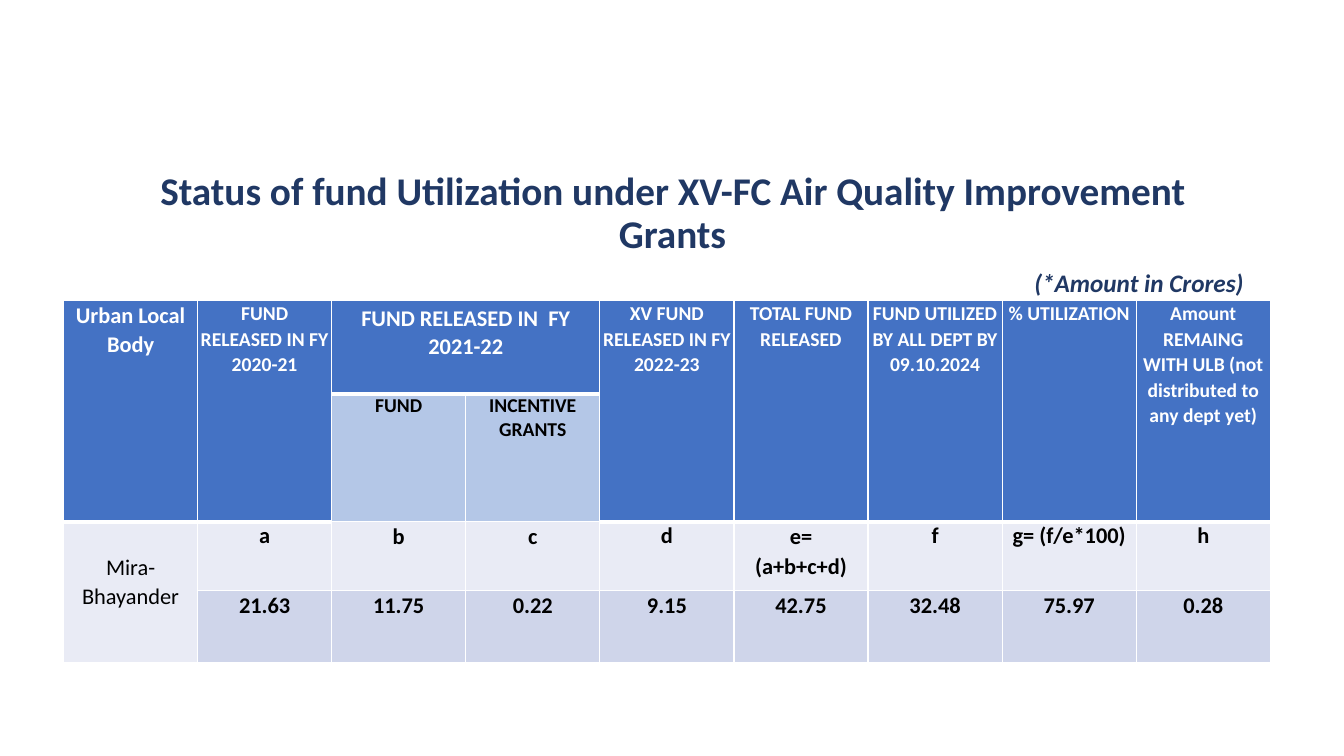
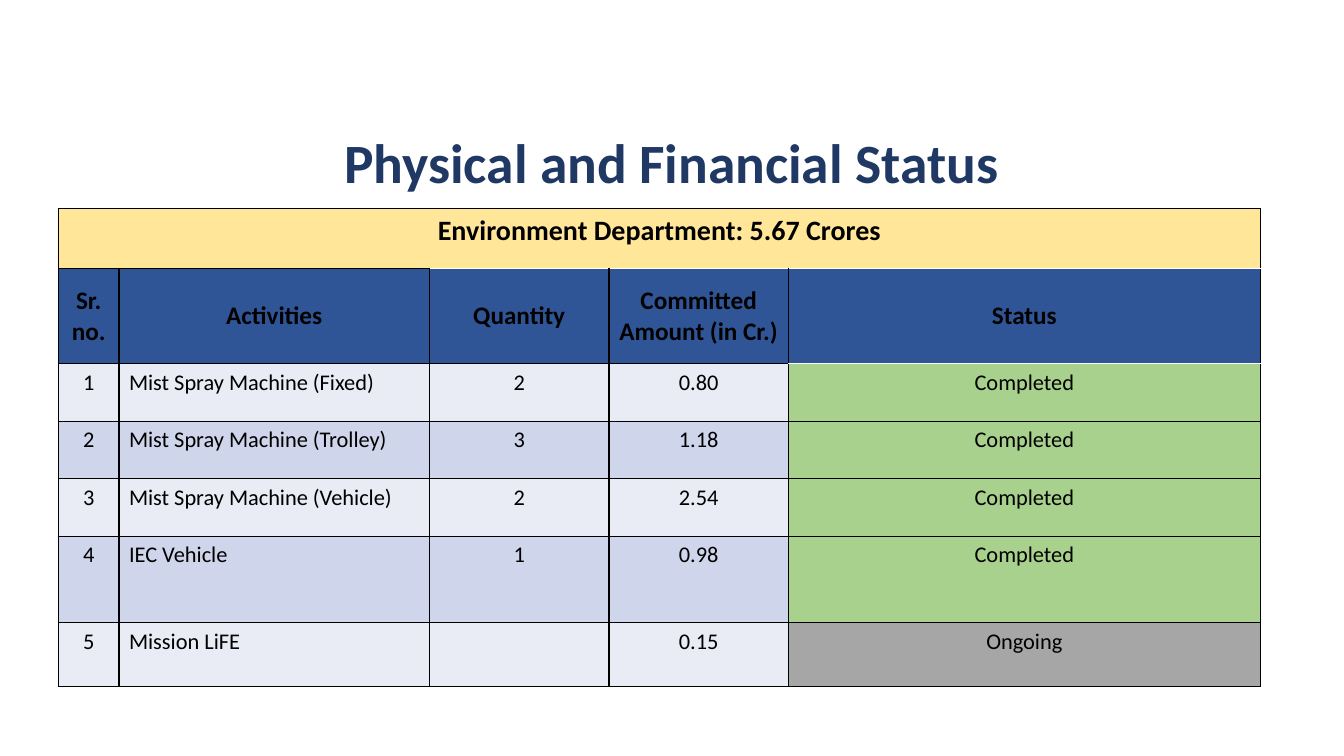
from dataclasses import dataclass

from lxml.etree import SubElement
from pptx import Presentation
from pptx.dml.color import RGBColor
from pptx.enum.text import MSO_ANCHOR as Anchor, MSO_AUTO_SIZE as AutoSize, PP_ALIGN as Align
from pptx.oxml.ns import qn
from pptx.util import Inches, Pt


@dataclass(frozen=True)
class Theme:
    font: str = "Calibri"
    # Colours
    navy: str = "203864"
    header: str = "4472C4"
    subheader: str = "B4C7E7"
    dark_header: str = "2F5597"
    band_light: str = "E9EBF5"
    band_dark: str = "CFD5EA"
    banner: str = "FFE699"
    done: str = "A9D18E"
    ongoing: str = "A6A6A6"
    black: str = "000000"
    white: str = "FFFFFF"
    # Type sizes
    title: float = 39.6
    long_title: float = 28
    banner_size: float = 20
    heading: float = 18
    body: float = 16
    small: float = 14
    # Cell margins: left, top, right, bottom
    roomy: tuple = (0.1, 0.05, 0.1, 0.05)
    tight: tuple = (0.03, 0, 0.03, 0)


class SlideBuilder:
    SIDES = ("lnL", "lnR", "lnT", "lnB")

    def __init__(self, theme):
        self.theme = theme
        self.deck = Presentation()
        self.deck.slide_width = Inches(13.33)
        self.deck.slide_height = Inches(7.5)
        self.page = None

    def add_page(self):
        self.page = self.deck.slides.add_slide(self.deck.slide_layouts[5])

    def format_text(self, frame, size, color, bold=False, italic=False,
                    align=Align.CENTER, spacing=None, after=None):
        for para in frame.paragraphs:
            para.alignment = align
            if spacing:
                para.line_spacing = spacing
            for span in para.runs:
                span.font.name = self.theme.font
                span.font.size = Pt(size)
                span.font.bold = bold
                span.font.italic = italic
                span.font.color.rgb = RGBColor.from_string(color)
        if after:
            frame.paragraphs[-1].space_after = Pt(after)

    def title(self, text, left, top, width, height, size):
        box = self.page.shapes.title
        box.left, box.top, box.width, box.height = map(Inches, (left, top, width, height))
        frame = box.text_frame
        frame.text = text
        frame.word_wrap = True
        frame.auto_size = AutoSize.NONE
        frame.vertical_anchor = Anchor.MIDDLE
        self.format_text(frame, size, self.theme.navy, bold=True, spacing=0.9)

    def note(self, text, left, top, width, height):
        box = self.page.shapes.add_textbox(*map(Inches, (left, top, width, height)))
        frame = box.text_frame
        frame.word_wrap = True
        frame.text = text
        self.format_text(frame, self.theme.heading, self.theme.navy,
                         bold=True, italic=True, align=Align.LEFT)

    def table(self, left, top, columns, rows, line_color):
        frame = self.page.shapes.add_table(
            len(rows), len(columns), Inches(left), Inches(top),
            Inches(sum(columns)), Inches(sum(rows)))
        table = frame.table
        table.first_row = table.horz_banding = False
        for column, width in zip(table.columns, columns):
            column.width = Inches(width)
        for row, height in zip(table.rows, rows):
            row.height = Inches(height)
        for cell in table.iter_cells():
            for side in self.SIDES:
                self.border(cell, side, line_color, 1)
        return table

    def border(self, cell, side, color, width):
        properties = cell._tc.get_or_add_tcPr()
        old = properties.find(qn(f"a:{side}"))
        if old is not None:
            properties.remove(old)
        line = SubElement(properties, qn(f"a:{side}"), w=str(Pt(width)))
        fill = SubElement(line, qn("a:solidFill"))
        SubElement(fill, qn("a:srgbClr"), val=color)
        properties.insert(self.SIDES.index(side), line)

    def edge_above(self, table, row, column, color, width):
        self.border(table.cell(row - 1, column), "lnB", color, width)
        self.border(table.cell(row, column), "lnT", color, width)

    def cell(self, cell, text, fill, size, color=None, bold=False, margins=None,
             anchor=Anchor.TOP, **paragraph_format):
        cell.fill.solid()
        cell.fill.fore_color.rgb = RGBColor.from_string(fill)
        left, top, right, bottom = map(Inches, margins or self.theme.roomy)
        cell.margin_left, cell.margin_right = left, right
        cell.margin_top, cell.margin_bottom = top, bottom
        cell.vertical_anchor = anchor
        if text:
            cell.text_frame.text = text
            self.format_text(cell.text_frame, size, color or self.theme.black,
                             bold, **paragraph_format)


def fund_slide(builder):
    theme = builder.theme
    builder.add_page()
    builder.title("Status of fund Utilization under XV-FC Air Quality Improvement Grants",
                  0.92, 1.65, 11.5, 0.95, theme.long_title)
    table = builder.table(0.63, 2.98, [1.33] * 9, [0.93, 0.67, 0.68, 0.72], theme.white)
    loose = dict(spacing=1.07, after=8)

    # Header row, merged down except for the two 2021-22 columns
    headers = ["Urban Local Body", "FUND RELEASED IN FY 2020-21",
               "FUND RELEASED IN  FY 2021-22", "", "XV FUND RELEASED IN FY 2022-23",
               "TOTAL FUND RELEASED", "FUND UTILIZED BY ALL DEPT BY 09.10.2024",
               "% UTILIZATION", "Amount REMAING WITH ULB (not distributed to any dept yet)"]
    split = {2: "FUND", 3: "INCENTIVE GRANTS"}
    for column, text in enumerate(headers):
        grouped = column in split
        builder.cell(table.cell(0, column), text, theme.header,
                     theme.body if column in (0, 2) else theme.small, theme.white, bold=True,
                     margins=theme.roomy if grouped else theme.tight,
                     **({} if grouped else loose))
        builder.cell(table.cell(1, column), split.get(column),
                     theme.subheader if grouped else theme.header, theme.small,
                     bold=True, margins=theme.tight)
        builder.edge_above(table, 1 if grouped else 2, column, theme.white, 3)
        if not grouped:
            builder.border(table.cell(0, column), "lnB", theme.white, 3)
            table.cell(0, column).merge(table.cell(1, column))
    table.cell(0, 2).merge(table.cell(0, 3))

    # Formula letters and amounts
    letters = ["a", "b", "c", "d", "e=\n(a+b+c+d)", "f", "g= (f/e*100)", "h"]
    amounts = ["21.63", "11.75", "0.22", "9.15", "42.75", "32.48", "75.97", "0.28"]
    for column, (letter, amount) in enumerate(zip(letters, amounts), start=1):
        spacing = 1.07 if letter[0] in "bce" else None
        builder.cell(table.cell(2, column), letter, theme.band_light, theme.body,
                     bold=True, margins=theme.tight, spacing=spacing)
        builder.cell(table.cell(3, column), amount, theme.band_dark, theme.body,
                     bold=True, margins=theme.tight, **loose)

    # Urban local body, merged over both rows
    builder.cell(table.cell(2, 0), "Mira-Bhayander", theme.band_light, theme.body,
                 margins=(0.1, 0.3, 0.1, 0.05), **loose)
    builder.cell(table.cell(3, 0), "", theme.band_light, theme.body)
    table.cell(2, 0).merge(table.cell(3, 0))

    builder.note("(*Amount in Crores)", 10.16, 2.6, 3.17, 0.73)


def status_slide(builder):
    theme = builder.theme
    builder.add_page()
    builder.title("Physical and Financial Status", 2.35, 1.31, 8.62, 0.66, theme.title)
    table = builder.table(0.58, 2.07, [0.6, 3.08, 1.78, 1.78, 4.68],
                          [0.59, 0.95, 0.57, 0.57, 0.57, 0.86, 0.63], theme.black)

    # Department banner and column headings
    headings = ["Sr. no.", "Activities", "Quantity", "Committed Amount (in Cr.)", "Status"]
    for column, text in enumerate(headings):
        builder.cell(table.cell(0, column),
                     "" if column else "Environment Department: 5.67 Crores",
                     theme.banner, theme.banner_size, bold=True)
        builder.cell(table.cell(1, column), text, theme.dark_header, theme.heading,
                     bold=True, anchor=Anchor.MIDDLE)
    table.cell(0, 0).merge(table.cell(0, 4))

    # Activities
    activities = [("Mist Spray Machine (Fixed)", "2", "0.80", "Completed"),
                  ("Mist Spray Machine (Trolley)", "3", "1.18", "Completed"),
                  ("Mist Spray Machine (Vehicle)", "2", "2.54", "Completed"),
                  ("IEC Vehicle", "1", "0.98", "Completed"),
                  ("Mission LiFE", "", "0.15", "Ongoing")]
    status_fill = {"Completed": theme.done, "Ongoing": theme.ongoing}
    for number, activity in enumerate(activities, start=1):
        band = theme.band_light if number % 2 else theme.band_dark
        for column, text in enumerate((str(number), *activity)):
            builder.cell(table.cell(number + 1, column), text,
                         status_fill.get(text, band), theme.body,
                         align=Align.LEFT if column == 1 else Align.CENTER)

    # White rules around the headings
    for row, column in ((1, 2), (1, 3), (1, 4), (2, 4)):
        builder.edge_above(table, row, column, theme.white, 1)


def main():
    builder = SlideBuilder(Theme())
    fund_slide(builder)
    status_slide(builder)
    builder.deck.save("out.pptx")


if __name__ == "__main__":
    main()
